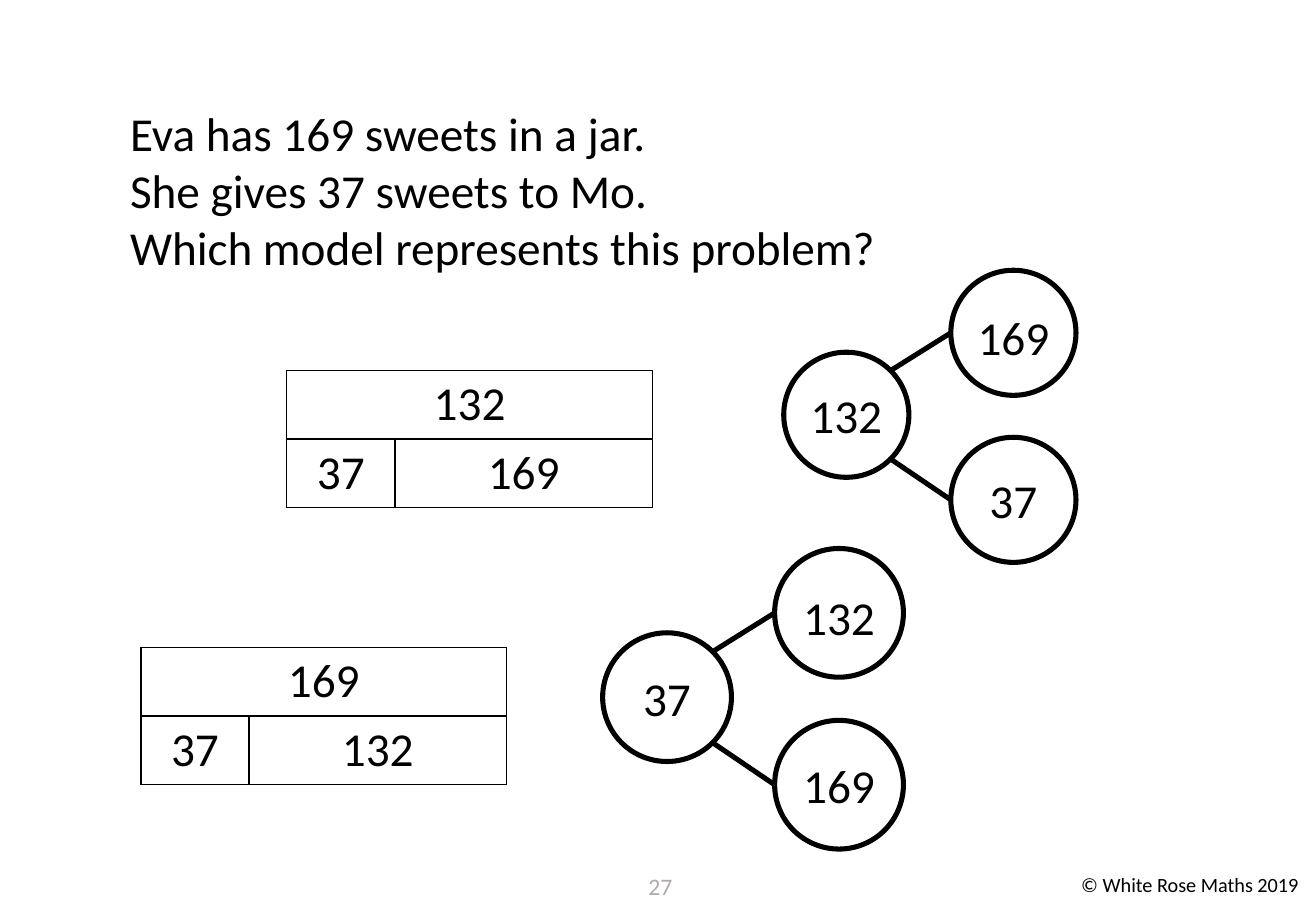
from dataclasses import dataclass
from math import sqrt

from lxml.etree import SubElement
from pptx import Presentation
from pptx.dml.color import RGBColor
from pptx.enum.shapes import MSO_CONNECTOR as Connector, MSO_SHAPE as Shape
from pptx.enum.text import MSO_ANCHOR as Anchor, MSO_AUTO_SIZE as AutoSize, PP_ALIGN as Align
from pptx.oxml.ns import qn
from pptx.util import Inches, Pt


@dataclass(frozen=True)
class Theme:
    font: str = "Calibri"
    ink: RGBColor = RGBColor(0, 0, 0)
    paper: RGBColor = RGBColor(255, 255, 255)
    muted: RGBColor = RGBColor(0xAF, 0xAB, 0xAB)
    main: int = 28
    number: int = 14
    footer: int = 12
    circle_line: int = 3
    border: int = 1


theme = Theme()


def write(frame, text, size=theme.main, color=theme.ink, align=Align.CENTER, anchor=Anchor.MIDDLE, wrap=True):
    """Fill a text frame, one paragraph for each line of text."""
    frame.text = text
    frame.word_wrap = wrap
    frame.vertical_anchor = anchor
    for paragraph in frame.paragraphs:
        paragraph.alignment = align
        paragraph.font.name = theme.font
        paragraph.font.size = Pt(size)
        paragraph.font.color.rgb = color


def style_cell(cell):
    """Give a table cell a thin border on every side and a plain fill."""
    properties = cell._tc.get_or_add_tcPr()
    for side in ("a:lnL", "a:lnR", "a:lnT", "a:lnB"):
        border = SubElement(properties, qn(side), w=str(Pt(theme.border)))
        fill = SubElement(border, qn("a:solidFill"))
        SubElement(fill, qn("a:srgbClr"), val=str(theme.ink))
    cell.fill.solid()
    cell.fill.fore_color.rgb = theme.paper
    cell.margin_top = cell.margin_bottom = Inches(0.04)


presentation = Presentation()
presentation.slide_width = Inches(10.83)
presentation.slide_height = Inches(7.5)
slide = presentation.slides.add_slide(presentation.slide_layouts.get_by_name("Title Only"))

# Question
question = slide.shapes.title
question.left, question.top = Inches(0.97), Inches(0.81)
question.width, question.height = Inches(8.81), Inches(1.51)
write(
    question.text_frame,
    "Eva has 169 sweets in a jar.\nShe gives 37 sweets to Mo.\nWhich model represents this problem?",
    align=Align.LEFT,
    anchor=Anchor.TOP,
)
question.text_frame.auto_size = AutoSize.NONE

# Bar models: the whole above its two parts
part_widths = (0.89, 2.12)
row_height = 0.565
bar_models = [
    (2.36, 3.05, "132", ("37", "169")),
    (1.16, 5.33, "169", ("37", "132")),
]
for left, top, whole, parts in bar_models:
    table = slide.shapes.add_table(
        2, 2, Inches(left), Inches(top), Inches(sum(part_widths)), Inches(2 * row_height)
    ).table
    table.first_row = table.horz_banding = False
    for column, width in zip(table.columns, part_widths):
        column.width = Inches(width)
    for cell in table.iter_cells():
        style_cell(cell)
    table.cell(0, 0).merge(table.cell(0, 1))
    labelled_cells = [(table.cell(0, 0), whole)]
    labelled_cells += [(table.cell(1, index), part) for index, part in enumerate(parts)]
    for cell, label in labelled_cells:
        write(cell.text_frame, label, wrap=None)
        cell.vertical_anchor = Anchor.MIDDLE

# Part-whole models: steps are shares of the circle's diameter
part_across, part_up, part_down = 1.335, -0.655, 0.68
diagonal = sqrt(0.5) / 2
part_whole_models = [
    (6.45, 2.9, 1.03, "132", ("169", "37")),
    (4.96, 5.21, 1.06, "37", ("132", "169")),
]
for left, top, diameter, whole, parts in part_whole_models:
    part_left = left + part_across * diameter
    upper_top, lower_top = top + part_up * diameter, top + part_down * diameter
    circles = [
        (left, top, whole, 0),
        (part_left, upper_top, parts[0], 0.06),
        (part_left, lower_top, parts[1], 0),
    ]
    for circle_left, circle_top, label, drop in circles:
        circle = slide.shapes.add_shape(
            Shape.OVAL, Inches(circle_left), Inches(circle_top), Inches(diameter), Inches(diameter)
        )
        circle.shadow.inherit = False
        circle.fill.solid()
        circle.fill.fore_color.rgb = theme.paper
        circle.line.color.rgb = theme.ink
        circle.line.width = Pt(theme.circle_line)
        frame = circle.text_frame
        frame.margin_left = frame.margin_right = frame.margin_bottom = 0
        frame.margin_top = Inches(drop)
        write(frame, label)
    for direction, part_top in ((-1, upper_top), (1, lower_top)):
        link = slide.shapes.add_connector(
            Connector.STRAIGHT,
            Inches(left + (0.5 + diagonal) * diameter),
            Inches(top + (0.5 + direction * diagonal) * diameter),
            Inches(part_left),
            Inches(part_top + diameter / 2),
        )
        link.line.color.rgb = theme.ink
        link.line.width = Pt(theme.circle_line)
        SubElement(link._element.spPr, qn("a:effectLst"))

# Footer
footers = [
    (5.18, 0.51, "27", theme.number, theme.muted, Align.CENTER),
    (8.8, 2.03, "© White Rose Maths 2019", theme.footer, theme.ink, Align.LEFT),
]
for left, width, text, size, color, align in footers:
    box = slide.shapes.add_textbox(Inches(left), Inches(7.13), Inches(width), Inches(0.3))
    write(box.text_frame, text, size=size, color=color, align=align, anchor=Anchor.TOP)

presentation.save("out.pptx")
